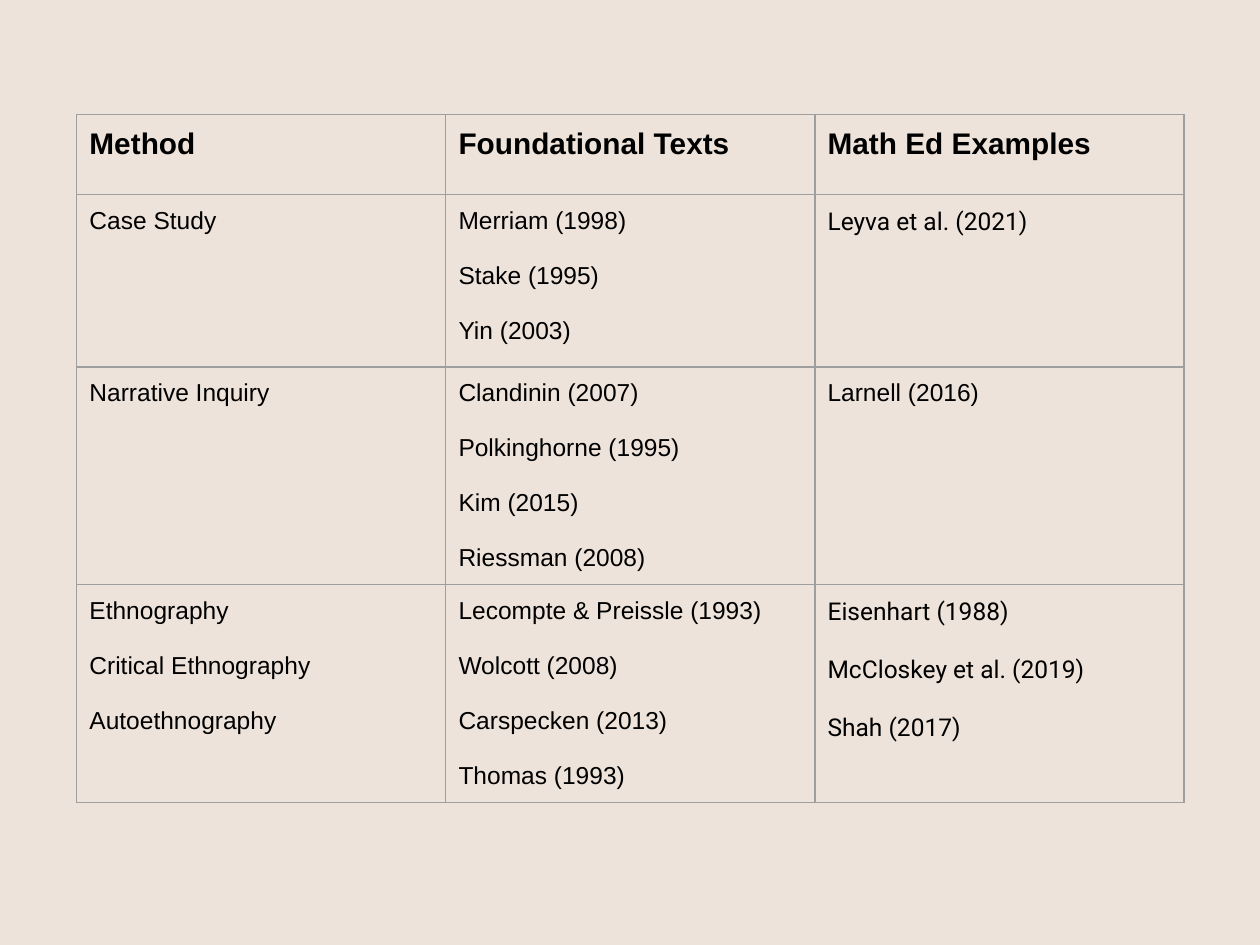
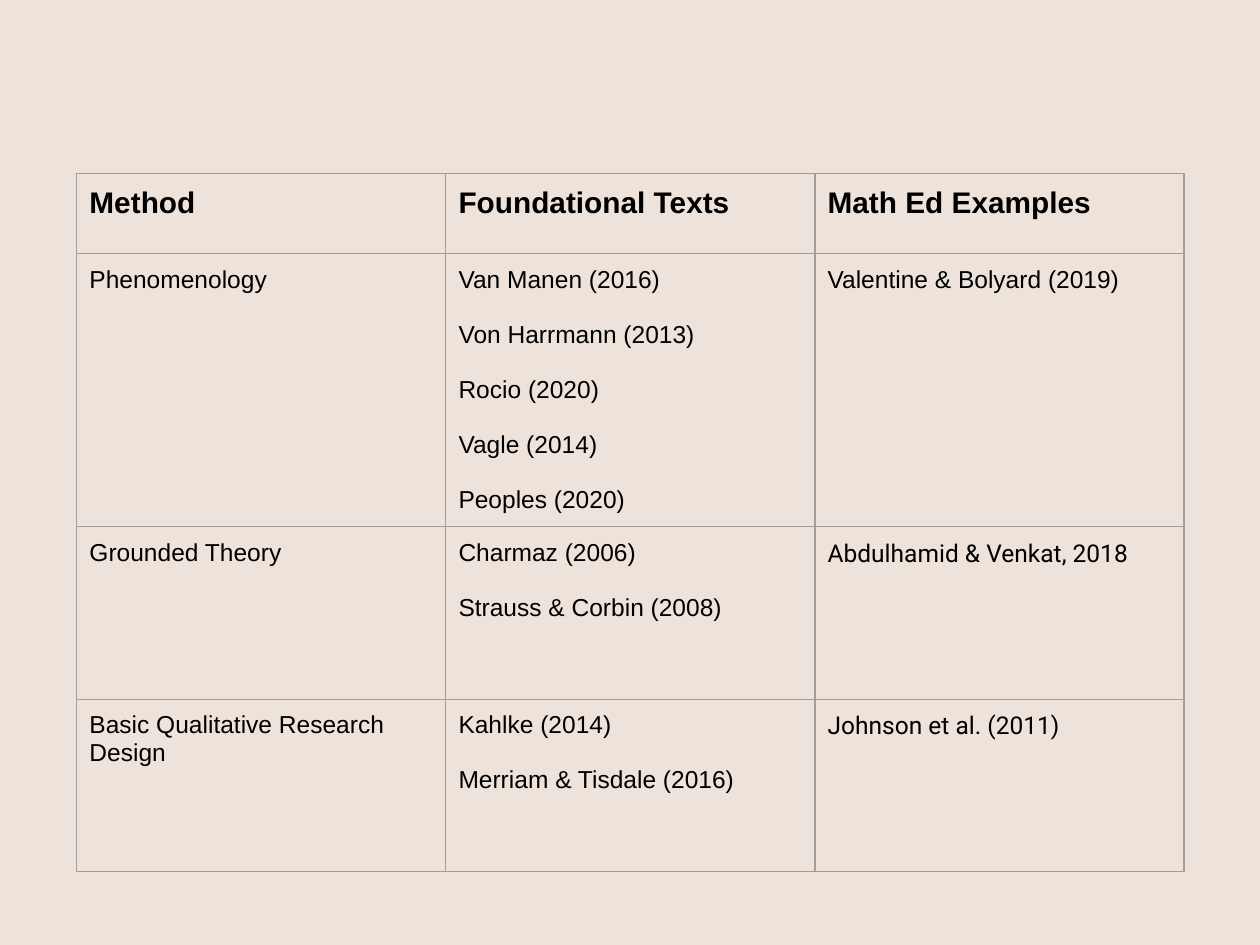
"""Build two slides of tables that match research methods to texts and examples."""
import pptx
import pptx.util
import pptx.dml.color
import pptx.oxml.ns
import lxml.etree

Pt = pptx.util.Pt
RGB = pptx.dml.color.RGBColor.from_string
COLORS = {"paper": "EDE3DA", "ink": "000000", "rule": "9E9E9E"}
GAPS = {"Arial": 15.7, "Roboto": 16.6}
LEFT, WIDTH, PAD = 43.9, 210.9, 7.2
HEAD = ("Method", "Foundational Texts", "Math Ed Examples")

PAGES = [
    (65.6, [45.7, 98.4, 124.5, 124.5], [
        (["Case Study"],
         ["Merriam (1998)", "Stake (1995)", "Yin (2003)"],
         ["Leyva et al. (2021)"]),
        (["Narrative Inquiry"],
         ["Clandinin (2007)", "Polkinghorne (1995)", "Kim (2015)", "Riessman (2008)"],
         ["Larnell (2016)"]),
        (["Ethnography", "Critical Ethnography", "Autoethnography"],
         ["Lecompte & Preissle (1993)", "Wolcott (2008)", "Carspecken (2013)", "Thomas (1993)"],
         ["Eisenhart (1988)", "McCloskey et al. (2019)", "Shah (2017)"]),
    ]),
    (99.2, [45.7, 156, 98.6, 98.6], [
        (["Phenomenology"],
         ["Van Manen (2016)", "Von Harrmann (2013)", "Rocio (2020)", "Vagle (2014)", "Peoples (2020)"],
         ["Valentine & Bolyard (2019)"]),
        (["Grounded Theory"],
         ["Charmaz (2006)", "Strauss & Corbin (2008)"],
         ["Abdulhamid & Venkat, 2018"]),
        (["Basic Qualitative Research Design"],
         ["Kahlke (2014)", "Merriam & Tisdale (2016)"],
         ["Johnson et al. (2011)"]),
    ]),
]
ROBOTO = {"Leyva et al. (2021)", "Eisenhart (1988)", "Abdulhamid & Venkat, 2018", "Johnson et al. (2011)"}


def frame(cell):
    """Clear the cell's fill and rule all four of its sides."""
    props = cell._tc.get_or_add_tcPr()
    for side in ("lnL", "lnR", "lnT", "lnB"):
        line = lxml.etree.SubElement(props, pptx.oxml.ns.qn("a:" + side), w=str(Pt(0.75)))
        fill = lxml.etree.SubElement(line, pptx.oxml.ns.qn("a:solidFill"))
        lxml.etree.SubElement(fill, pptx.oxml.ns.qn("a:srgbClr"), val=COLORS["rule"])
    cell.fill.background()


def write(cell, lines, size, font, bold):
    """Put one paragraph per line in the cell, with a line's gap between them."""
    cell.margin_left = cell.margin_right = cell.margin_top = cell.margin_bottom = Pt(PAD)
    cell.text = "\n".join(lines)
    for i, para in enumerate(cell.text_frame.paragraphs):
        para.space_before = Pt(GAPS[font] if i else 0)
        para.font.size = Pt(size)
        para.font.name = font
        para.font.bold = bold
        para.font.color.rgb = RGB(COLORS["ink"])


deck = pptx.Presentation()
deck.slide_width, deck.slide_height = Pt(720), Pt(540)

for top, heights, body in PAGES:
    slide = deck.slides.add_slide(deck.slide_layouts[6])
    slide.background.fill.solid()
    slide.background.fill.fore_color.rgb = RGB(COLORS["paper"])
    table = slide.shapes.add_table(
        len(heights), len(HEAD), Pt(LEFT), Pt(top), Pt(WIDTH * len(HEAD)), Pt(sum(heights))).table
    table.first_row = table.horz_banding = False
    for col in table.columns:
        col.width = Pt(WIDTH)
    for row, height in zip(table.rows, heights):
        row.height = Pt(height)
    for c, title in enumerate(HEAD):
        write(table.cell(0, c), [title], 17, "Arial", True)
        for r, entry in enumerate(body, 1):
            font = "Roboto" if entry[c][0] in ROBOTO else "Arial"
            write(table.cell(r, c), entry[c], 14, font, False)
    for cell in table.iter_cells():
        frame(cell)

deck.save("out.pptx")
